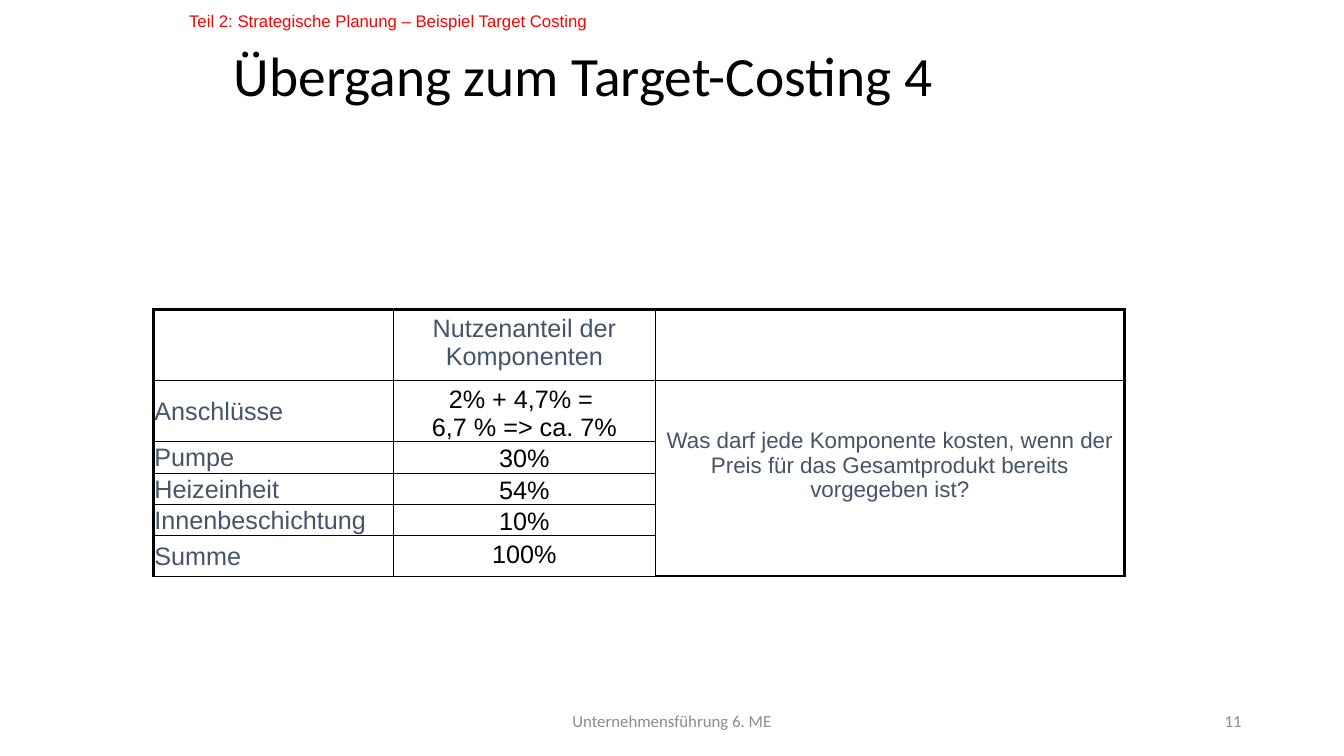
from dataclasses import dataclass

import pptx
import pptx.dml.color
import pptx.enum.text
import pptx.oxml
import pptx.oxml.ns
import pptx.util

Pt = pptx.util.Pt
Align = pptx.enum.text.PP_ALIGN
Anchor = pptx.enum.text.MSO_ANCHOR

COLORS = {"black": "000000", "slate": "44546A", "gray": "8C8C8C", "red": "FF0000"}
THIN, THICK = 1, 2.25
COLUMN_WIDTHS = [171.4, 187.2, 334.8]
ROW_HEIGHTS = [48.5, 41, 21, 21, 21, 28]


@dataclass
class Label:
    text: str
    box: tuple[float, float, float, float]
    size: float
    color: str
    font: str = "Calibri"
    align: Align = Align.LEFT
    anchor: Anchor = Anchor.MIDDLE
    line_spacing: float = 1.0


@dataclass
class Component:
    name: str
    share: str


LABELS = [
    Label("Unternehmensführung 6. ME", (318, 500.5, 324, 28.75), 12, "gray", align=Align.CENTER),
    Label("11", (678, 500.5, 216, 28.75), 12, "gray", align=Align.RIGHT),
    Label("Übergang zum Target-Costing 4", (160, 32.4, 640, 48), 39.6, "black", line_spacing=0.9),
    Label("Teil 2: Strategische Planung – Beispiel Target Costing", (128, 4.4, 343, 21.6),
          12, "red", font="Arial", anchor=Anchor.TOP),
]
COMPONENTS = [
    Component("Anschlüsse", "2% + 4,7% = \n6,7 % => ca. 7%"),
    Component("Pumpe", "30%"),
    Component("Heizeinheit", "54%"),
    Component("Innenbeschichtung", "10%"),
    Component("Summe", "100%"),
]
QUESTION = ("Was darf jede Komponente kosten, wenn der Preis für das "
            "Gesamtprodukt bereits vorgegeben ist?")


def write_text(frame, text: str, *, size: float, color: str, font: str = "Arial",
               align: Align = Align.LEFT, line_spacing: float = 1.0,
               space_before: float = 0) -> None:
    paragraph = frame.paragraphs[0]
    paragraph.text = text
    paragraph.alignment = align
    paragraph.line_spacing = line_spacing
    paragraph.space_before = Pt(space_before)
    for run in paragraph.runs:
        run.font.size = Pt(size)
        run.font.name = font
        run.font.color.rgb = pptx.dml.color.RGBColor.from_string(COLORS[color])


def add_label(slide, label: Label) -> None:
    shape = slide.shapes.add_textbox(*(Pt(length) for length in label.box))
    frame = shape.text_frame
    frame.word_wrap = True
    frame.vertical_anchor = label.anchor
    write_text(frame, label.text, size=label.size, color=label.color, font=label.font,
               align=label.align, line_spacing=label.line_spacing)


def set_borders(cell, widths: dict[str, float]) -> None:
    properties = cell._tc.get_or_add_tcPr()
    namespace = pptx.oxml.ns.nsdecls("a")
    for side, width in widths.items():
        properties.append(pptx.oxml.parse_xml(
            f'<a:ln{side} {namespace} w="{Pt(width)}"><a:solidFill>'
            f'<a:srgbClr val="{COLORS["black"]}"/></a:solidFill></a:ln{side}>'))


def set_tight_margins(cell) -> None:
    cell.margin_left = cell.margin_right = cell.margin_top = Pt(0.75)
    cell.margin_bottom = Pt(0)


def add_cost_table(slide) -> None:
    table = slide.shapes.add_table(
        len(ROW_HEIGHTS), len(COLUMN_WIDTHS), Pt(109.6), Pt(221.2),
        Pt(sum(COLUMN_WIDTHS)), Pt(sum(ROW_HEIGHTS))).table
    table.first_row = table.horz_banding = False
    for column, width in zip(table.columns, COLUMN_WIDTHS):
        column.width = Pt(width)
    for row, height in zip(table.rows, ROW_HEIGHTS):
        row.height = Pt(height)

    # Thin grid inside a thick frame
    last_row, last_column = len(ROW_HEIGHTS) - 1, len(COLUMN_WIDTHS) - 1
    for i in range(last_row + 1):
        for j in range(last_column + 1):
            cell = table.cell(i, j)
            set_borders(cell, {
                "L": THICK if j == 0 else THIN,
                "R": THICK if j == last_column else THIN,
                "T": THICK if i == 0 else THIN,
                "B": THICK if i > 0 and j == last_column else THIN,
            })
            cell.fill.background()

    # Header and component rows
    write_text(table.cell(0, 1).text_frame, "Nutzenanteil der Komponenten", size=18,
               color="slate", align=Align.CENTER, space_before=3.6)
    for i, component in enumerate(COMPONENTS, start=1):
        name, share = table.cell(i, 0), table.cell(i, 1)
        set_tight_margins(name)
        name.vertical_anchor = Anchor.MIDDLE
        if i < last_row:
            set_tight_margins(share)
            share.vertical_anchor = Anchor.BOTTOM
        write_text(name.text_frame, component.name, size=18, color="slate")
        write_text(share.text_frame, component.share, size=18, color="black",
                   align=Align.CENTER)

    # Question across all component rows
    question = table.cell(1, last_column)
    question.merge(table.cell(last_row, last_column))
    question.vertical_anchor = Anchor.MIDDLE
    question.margin_bottom = Pt(22)
    write_text(question.text_frame, QUESTION, size=16, color="slate",
               align=Align.CENTER, space_before=3.2)


def main() -> None:
    presentation = pptx.Presentation()
    presentation.slide_width, presentation.slide_height = Pt(960), Pt(540)
    slide = presentation.slides.add_slide(presentation.slide_layouts[6])
    for label in LABELS:
        add_label(slide, label)
    add_cost_table(slide)
    presentation.save("out.pptx")


if __name__ == "__main__":
    main()
